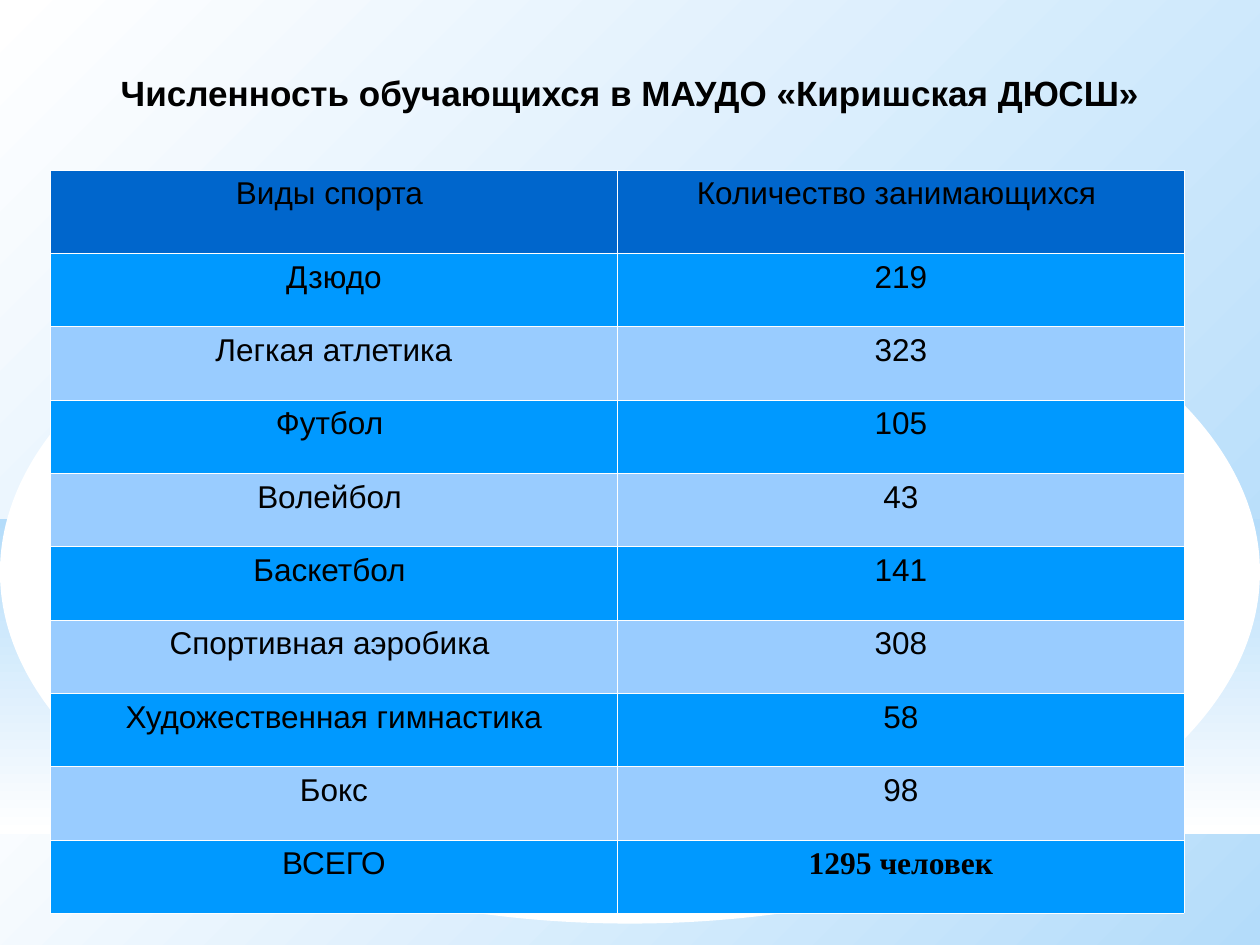
"""Build the slide on student numbers by sport."""
import pptx
import pptx.dml.color
import pptx.enum.shapes
import pptx.enum.text
import pptx.oxml.ns
import pptx.util
import lxml.etree

Inches = pptx.util.Inches
Shape = pptx.enum.shapes.MSO_SHAPE

TITLE = "Численность обучающихся в МАУДО «Киришская ДЮСШ»"
ROWS = [
    ("Виды спорта ", "Количество занимающихся "),
    ("Дзюдо", "219"),
    ("Легкая атлетика", "323"),
    ("Футбол ", "105"),
    ("Волейбол ", "43"),
    ("Баскетбол ", "141"),
    ("Спортивная аэробика ", "308"),
    ("Художественная гимнастика", "58"),
    ("Бокс", "98"),
    ("ВСЕГО", "1295 человек"),
]
THEME = {
    "font": "Arial", "total_font": "Times New Roman",
    "title_size": 20, "cell_size": 18, "border_width": 0.06,
    "text": "000000", "white": "FFFFFF", "sky": "B4DCFA",
    "header": "0066CC", "bands": ("0099FF", "99CCFF"),
}
DIAGONAL, DOWNWARD = 315, 270
BACKDROP = [
    (Shape.RECTANGLE, (0, 5.58, 10, 1.92), ("white", "sky"), DIAGONAL),
    (Shape.RECTANGLE, (0, 0, 10, 5.58), ("white", "sky"), DIAGONAL),
    (Shape.RECTANGLE, (0, 4.12, 10, 2.5), ("sky", "white"), DOWNWARD),
    (Shape.OVAL, (0, 1.75, 10, 5.58), ("white",), None),
]
TITLE_BOX = (0.5, 0.57, 9, 0.33)
TABLE_BOX = (0.4, 1.35, 9, 5.9)
HEADER_HEIGHT = 0.66


def color(value):
    return pptx.dml.color.RGBColor.from_string(value)


def inches(values):
    return [Inches(value) for value in values]


def add_backdrop(page):
    for kind, box, names, angle in BACKDROP:
        shape = page.shapes.add_shape(kind, *inches(box))
        shape.shadow.inherit = False
        shape.line.fill.background()
        if angle is None:
            shape.fill.solid()
            shape.fill.fore_color.rgb = color(THEME[names[0]])
            continue
        shape.fill.gradient()
        shape.fill.gradient_angle = angle
        for stop, name, position in zip(shape.fill.gradient_stops, names, (0, 1)):
            stop.color.rgb = color(THEME[name])
            stop.position = position


def write(frame, text, size, font, bold):
    para = frame.paragraphs[0]
    para.alignment = pptx.enum.text.PP_ALIGN.CENTER
    span = para.add_run()
    span.text = text
    span.font.size = pptx.util.Pt(size)
    span.font.name = font
    span.font.bold = bold
    span.font.color.rgb = color(THEME["text"])


def place_title(page):
    title = page.shapes.title
    title.left, title.top, title.width, title.height = inches(TITLE_BOX)
    frame = title.text_frame
    frame.margin_left = frame.margin_right = frame.margin_top = frame.margin_bottom = 0
    frame.vertical_anchor = pptx.enum.text.MSO_ANCHOR.MIDDLE
    frame.auto_size = pptx.enum.text.MSO_AUTO_SIZE.SHAPE_TO_FIT_TEXT
    frame.word_wrap = True
    write(frame, TITLE, THEME["title_size"], THEME["font"], True)
    page.shapes._spTree.append(title._element)


def add_borders(cell):
    qn = pptx.oxml.ns.qn
    properties = cell._tc.get_or_add_tcPr()
    width = str(int(pptx.util.Pt(THEME["border_width"])))
    for side in ("a:lnL", "a:lnR", "a:lnT", "a:lnB"):
        line = lxml.etree.SubElement(properties, qn(side), w=width)
        fill = lxml.etree.SubElement(line, qn("a:solidFill"))
        lxml.etree.SubElement(fill, qn("a:srgbClr"), val=THEME["white"])


def add_sports_table(page):
    columns = len(ROWS[0])
    table = page.shapes.add_table(len(ROWS), columns, *inches(TABLE_BOX)).table
    for column in table.columns:
        column.width = Inches(TABLE_BOX[2] / columns)
    body_height = (TABLE_BOX[3] - HEADER_HEIGHT) / (len(ROWS) - 1)
    for row_index, values in enumerate(ROWS):
        is_header = row_index == 0
        table.rows[row_index].height = Inches(HEADER_HEIGHT if is_header else body_height)
        fill = THEME["header"] if is_header else THEME["bands"][(row_index - 1) % 2]
        for column_index, text in enumerate(values):
            cell = table.cell(row_index, column_index)
            is_total = (row_index, column_index) == (len(ROWS) - 1, columns - 1)
            add_borders(cell)
            cell.fill.solid()
            cell.fill.fore_color.rgb = color(fill)
            font = THEME["total_font" if is_total else "font"]
            write(cell.text_frame, text, THEME["cell_size"], font, is_total)


def main():
    deck = pptx.Presentation()
    deck.slide_width, deck.slide_height = inches((10, 7.5))
    page = deck.slides.add_slide(deck.slide_layouts.get_by_name("Title Only"))
    add_backdrop(page)
    add_sports_table(page)
    place_title(page)
    deck.save("out.pptx")


if __name__ == "__main__":
    main()
